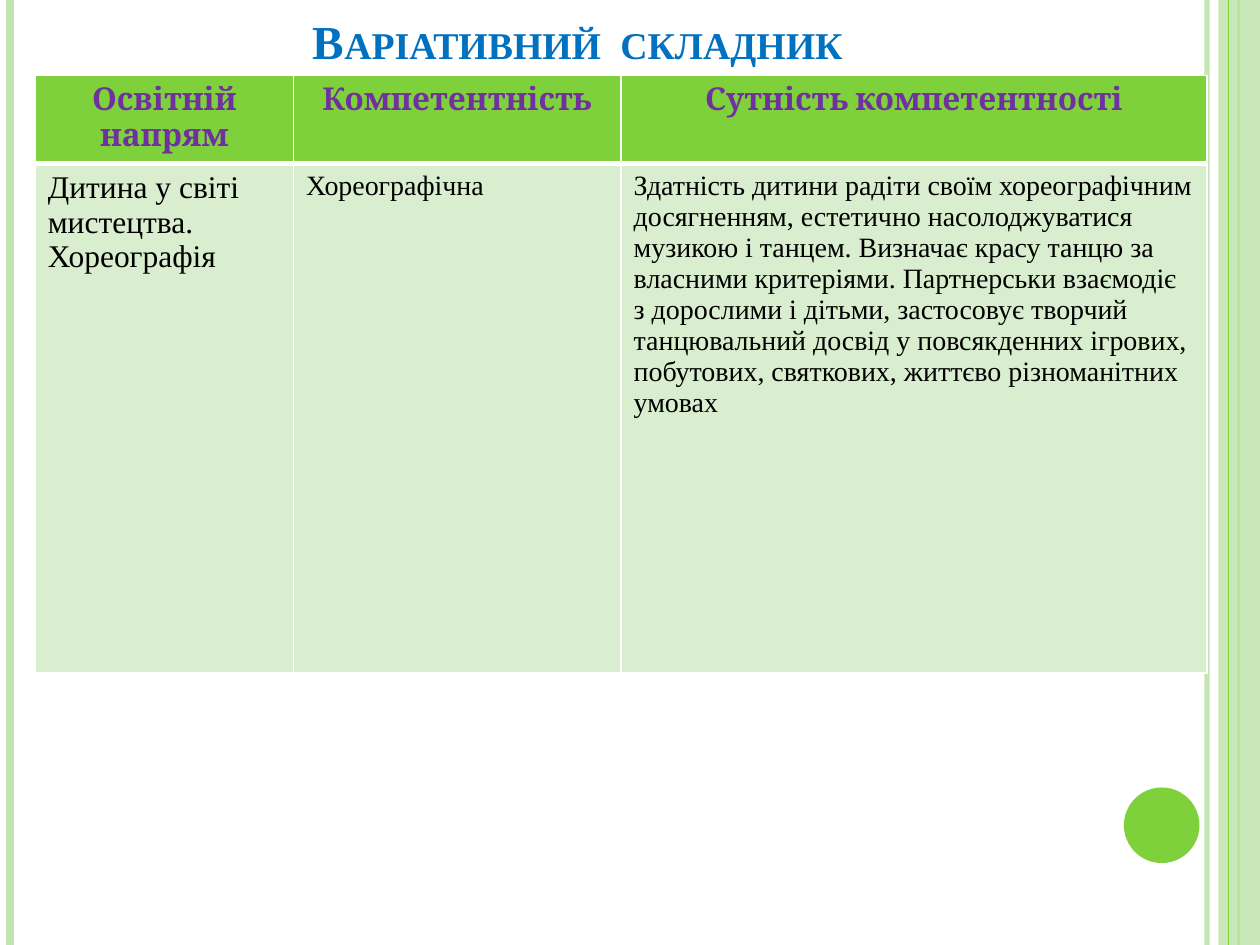
from lxml.etree import SubElement
from pptx import Presentation
from pptx.dml.color import RGBColor
from pptx.enum.shapes import MSO_CONNECTOR, MSO_SHAPE
from pptx.enum.text import MSO_ANCHOR, PP_ALIGN
from pptx.oxml.ns import qn
from pptx.util import Inches, Pt

PALE_GREEN = RGBColor(0xC0, 0xE5, 0xAF)
GREEN = RGBColor(0x7F, 0xD1, 0x3B)
CELL_GREEN = RGBColor(0xD8, 0xEE, 0xCE)
WHITE = RGBColor(0xFF, 0xFF, 0xFF)
BLACK = RGBColor(0, 0, 0)
BLUE = RGBColor(0x00, 0x70, 0xC0)
PURPLE = RGBColor(0x70, 0x30, 0xA0)

HEADINGS = ["Освітній напрям", "Компетентність", "Сутність компетентності"]
DETAILS = [
    ["Дитина у світі мистецтва.", "Хореографія"],
    ["Хореографічна"],
    ["Здатність дитини радіти своїм хореографічним досягненням, естетично "
     "насолоджуватися музикою і танцем. Визначає красу танцю за власними "
     "критеріями. Партнерськи взаємодіє з дорослими і дітьми, застосовує "
     "творчий танцювальний досвід у повсякденних ігрових, побутових, "
     "святкових, життєво різноманітних умовах"],
]


def write(para, text, size=16, font="Times New Roman", color=BLACK,
          bold=False, align=PP_ALIGN.LEFT, small_caps=False):
    para.alignment = align
    span = para.add_run()
    span.text = text
    span.font.size = Pt(size)
    span.font.name = font
    span.font.bold = bold
    span.font.color.rgb = color
    if small_caps:
        span._r.get_or_add_rPr().set("cap", "small")


def set_opacity(properties, percent):
    """Make the first solid colour below the element partly transparent."""
    color = next(properties.iter(qn("a:srgbClr")))
    SubElement(color, qn("a:alpha"), val=str(percent * 1000))


def set_borders(cell, **widths):
    """Draw white borders; call before the cell is filled, as XML order matters."""
    properties = cell._tc.get_or_add_tcPr()
    for side in "LRTB":
        width = Pt(widths.get(side, 1))
        line = SubElement(properties, qn(f"a:ln{side}"), w=str(int(width)))
        fill = SubElement(line, qn("a:solidFill"))
        SubElement(fill, qn("a:srgbClr"), val=str(WHITE))


class SlideBuilder:
    def __init__(self, deck):
        self.height = deck.slide_height
        self.page = deck.slides.add_slide(deck.slide_layouts[5])
        self.shapes = self.page.shapes

    def stripe(self, left, color, width, opacity=100):
        """Add a vertical line over the full height of the page."""
        x = Inches(left)
        line = self.shapes.add_connector(MSO_CONNECTOR.STRAIGHT, x, 0, x, self.height)
        line.line.color.rgb = color
        line.line.width = Pt(width)
        if opacity < 100:
            set_opacity(line._element.spPr, opacity)
        SubElement(line._element.spPr, qn("a:effectLst"))

    def shape(self, kind, left, top, width, height, color, opacity=100):
        box = self.shapes.add_shape(
            kind, Inches(left), Inches(top), Inches(width), Inches(height))
        box.shadow.inherit = False
        box.fill.solid()
        box.fill.fore_color.rgb = color
        box.line.fill.background()
        if opacity < 100:
            set_opacity(box._element.spPr, opacity)

    def title(self, text, left, top, width, height):
        box = self.shapes.title
        box.left, box.top = Inches(left), Inches(top)
        box.width, box.height = Inches(width), Inches(height)
        frame = box.text_frame
        frame.word_wrap = True
        frame.vertical_anchor = MSO_ANCHOR.BOTTOM
        write(frame.paragraphs[0], text, size=27, color=BLUE, bold=True,
              align=PP_ALIGN.CENTER, small_caps=True)

    def cell(self, cell, lines, background, borders, **style):
        set_borders(cell, **borders)
        cell.fill.solid()
        cell.fill.fore_color.rgb = background
        frame = cell.text_frame
        for index, text in enumerate(lines):
            para = frame.add_paragraph() if index else frame.paragraphs[0]
            write(para, text, **style)

    def table(self, left, top, widths, heights):
        table = self.shapes.add_table(
            len(heights), len(widths), Inches(left), Inches(top),
            Inches(sum(widths)), Inches(sum(heights))).table
        table.first_row = table.horz_banding = False
        for column, width in zip(table.columns, widths):
            column.width = Inches(width)
        for row, height in zip(table.rows, heights):
            row.height = Inches(height)
        for index, (heading, lines) in enumerate(zip(HEADINGS, DETAILS)):
            self.cell(table.cell(0, index), [heading], GREEN, {"B": 3}, size=18,
                      font="Cambria", color=PURPLE, bold=True, align=PP_ALIGN.CENTER)
            self.cell(table.cell(1, index), lines, CELL_GREEN, {"T": 3},
                      size=16 if index else 18)


def main():
    deck = Presentation()
    deck.slide_width, deck.slide_height = Inches(10), Inches(7.5)
    slide = SlideBuilder(deck)
    slide.stripe(9.58, PALE_GREEN, 3, opacity=93)
    slide.stripe(0.08, PALE_GREEN, 4.5)
    slide.stripe(9.83, GREEN, 1.5)
    slide.shape(MSO_SHAPE.RECTANGLE, 9.67, 0, 0.33, 7.5, PALE_GREEN, opacity=87)
    slide.stripe(9.75, GREEN, 0.75)
    slide.shape(MSO_SHAPE.OVAL, 8.92, 6.25, 0.6, 0.6, GREEN)
    slide.title("Варіативний  складник", 0.5, 0.13, 8.17, 0.47)
    slide.table(0.28, 0.6, widths=[2.05, 2.6, 4.65], heights=[0.7, 4.04])
    deck.save("out.pptx")


if __name__ == "__main__":
    main()
